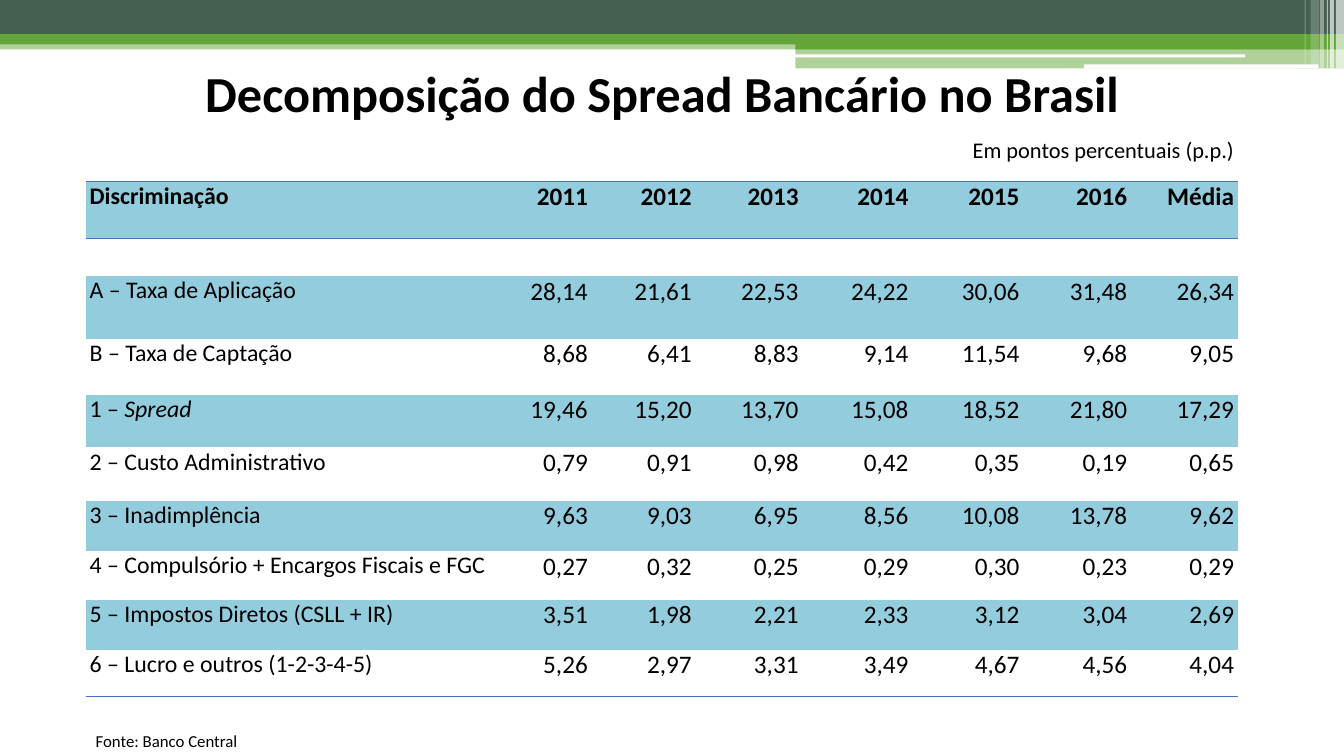
from lxml import etree
from pptx import Presentation
from pptx.dml.color import RGBColor
from pptx.enum import shapes, text
from pptx.oxml.ns import qn
from pptx.util import Inches, Pt

BLACK = RGBColor(0x00, 0x00, 0x00)
WHITE = RGBColor(0xFF, 0xFF, 0xFF)
DARK_GREEN = RGBColor(0x45, 0x5F, 0x51)
GREEN = RGBColor(0x63, 0xA5, 0x37)
BAND_BLUE = RGBColor(0x93, 0xCD, 0xDD)
RULE_BLUE = RGBColor(0x44, 0x72, 0xC4)

FONT = "Calibri"
NO_TABLE_STYLE = "{2D5ABB26-0587-4C30-8999-92F81FD0307C}"
RECTANGLE = shapes.MSO_SHAPE.RECTANGLE
ROUNDED = shapes.MSO_SHAPE.ROUNDED_RECTANGLE
LEFT, CENTER, RIGHT = text.PP_ALIGN.LEFT, text.PP_ALIGN.CENTER, text.PP_ALIGN.RIGHT

# left, top, width, height, colour, opacity in percent
BANNER_BARS = [
    (0, 0.4, 13.33, 0.09, GREEN, 50),
    (0, 0, 13.33, 0.34, DARK_GREEN, 100),
    (0, 0.34, 13.33, 0.1, GREEN, 100),
    (7.89, 0.39, 5.44, 0.1, GREEN, 100),
    (7.89, 0.48, 5.44, 0.2, GREEN, 50),
]
BANNER_GAPS = [
    (7.88, 0.54, 4.47, 0.03, WHITE, 100),
    (10.75, 0.64, 2.33, 0.04, WHITE, 100),
]
# left, width, height, opacity in percent
BANNER_STRIPES = [
    (13.25, 0.08, 0.68, 65),
    (13.19, 0.04, 0.68, 65),
    (13.16, 0.01, 0.68, 60),
    (13.09, 0.04, 0.68, 40),
    (13, 0.08, 0.64, 20),
    (12.94, 0.01, 0.64, 30),
]

COLUMN_WIDTHS = [4.16, 1.05, 1.05, 1.05, 1.08, 1.1, 0.97, 0.97]
RIGHT_MARGINS = [0, 0.23, 0.25, 0.24, 0.23, 0.23, 0.13, 0.04]
ROW_HEIGHTS = [0.27, 0.57, 0.37, 0.62, 0.56, 0.52, 0.53, 0.5, 0.48, 0.5, 0.46, 0.32]
HEADER_ROW, FIRST_DATA_ROW = 1, 3
RULES = {0: "a:lnB", 1: "a:lnT", 10: "a:lnB", 11: "a:lnT"}

UNIT_NOTE = "Em pontos percentuais (p.p.)"
HEADER = ["Discriminação", "2011", "2012", "2013", "2014", "2015", "2016", "Média"]
SPREAD_ROWS = [
    ["A – Taxa de Aplicação", "28,14", "21,61", "22,53", "24,22", "30,06", "31,48", "26,34"],
    ["B – Taxa de Captação", "8,68", "6,41", "8,83", "9,14", "11,54", "9,68", "9,05"],
    ["1 – Spread", "19,46", "15,20", "13,70", "15,08", "18,52", "21,80", "17,29"],
    ["2 – Custo Administrativo", "0,79", "0,91", "0,98", "0,42", "0,35", "0,19", "0,65"],
    ["3 – Inadimplência", "9,63", "9,03", "6,95", "8,56", "10,08", "13,78", "9,62"],
    ["4 – Compulsório + Encargos Fiscais e FGC",
     "0,27", "0,32", "0,25", "0,29", "0,30", "0,23", "0,29"],
    ["5 – Impostos Diretos (CSLL + IR)",
     "3,51", "1,98", "2,21", "2,33", "3,12", "3,04", "2,69"],
    ["6 – Lucro e outros (1-2-3-4-5)",
     "5,26", "2,97", "3,31", "3,49", "4,67", "4,56", "4,04"],
]
SPACE_BEFORE = [7.8, 6.3, 6.3, 6.3, 6.3, 6.8, 5.8, 5.8]
ITALIC_WORD = "Spread"


def set_values(target, values):
    for name, value in values.items():
        setattr(target, name, value)


def add_run(paragraph, words, size, **font_values):
    run = paragraph.add_run()
    run.text = words
    set_values(run.font, {"name": FONT, "size": Pt(size), **font_values})
    run.font.color.rgb = BLACK


def add_bar(slide, preset, left, top, width, height, color, opacity):
    bar = slide.shapes.add_shape(
        preset, Inches(left), Inches(top), Inches(width), Inches(height))
    bar.shadow.inherit = False
    bar.line.fill.background()
    bar.fill.solid()
    bar.fill.fore_color.rgb = color
    if opacity < 100:
        color_node = bar.fill._xPr.find(f".//{qn('a:srgbClr')}")
        etree.SubElement(color_node, qn("a:alpha"), val=str(opacity * 1000))


def add_banner(slide):
    for bar in BANNER_BARS:
        add_bar(slide, RECTANGLE, *bar)
    for gap in BANNER_GAPS:
        add_bar(slide, ROUNDED, *gap)
    for left, width, height, opacity in BANNER_STRIPES:
        add_bar(slide, RECTANGLE, left, 0, width, height, WHITE, opacity)


def add_text(slide, words, left, top, width, height, size, align, anchor, bold=False):
    box = slide.shapes.add_textbox(
        Inches(left), Inches(top), Inches(width), Inches(height))
    set_values(box.text_frame, {"word_wrap": True, "vertical_anchor": anchor})
    paragraph = box.text_frame.paragraphs[0]
    paragraph.alignment = align
    add_run(paragraph, words, size, bold=bold)


def add_rule(cell, edge):
    """Draw a thin blue border on one edge, given as a:lnT or a:lnB."""
    line = etree.Element(qn(edge), w=str(Pt(1)))
    fill = etree.SubElement(line, qn("a:solidFill"))
    etree.SubElement(fill, qn("a:srgbClr"), val=str(RULE_BLUE))
    cell._tc.get_or_add_tcPr().insert(0, line)


def fill_row(table, row_index, values, space_before, bold):
    for column_index, value in enumerate(values):
        cell = table.cell(row_index, column_index)
        paragraph = cell.text_frame.paragraphs[0]
        paragraph.space_before = Pt(space_before)
        if column_index:
            cell.margin_right = Inches(RIGHT_MARGINS[column_index])
            paragraph.alignment = RIGHT
            add_run(paragraph, value, 18, bold=bold)
            continue
        cell.margin_left = Inches(0.04)
        plain, italic, _ = value.partition(ITALIC_WORD)
        add_run(paragraph, plain, 17, bold=bold)
        if italic:
            add_run(paragraph, italic, 17, italic=True)


def format_cells(table):
    """Clear margins and fills, then shade alternate rows and draw the rules."""
    no_margins = dict.fromkeys(
        ["margin_left", "margin_right", "margin_top", "margin_bottom"], 0)
    for row_index, row in enumerate(table.rows):
        row.height = Inches(ROW_HEIGHTS[row_index])
        shaded = row_index % 2 == 1 and row_index < len(ROW_HEIGHTS) - 1
        for cell in row.cells:
            set_values(cell, no_margins)
            if shaded:
                cell.fill.solid()
                cell.fill.fore_color.rgb = BAND_BLUE
            else:
                cell.fill.background()
            if row_index in RULES:
                add_rule(cell, RULES[row_index])


def add_spread_table(slide):
    frame = slide.shapes.add_table(
        len(ROW_HEIGHTS), len(COLUMN_WIDTHS), Inches(0.85), Inches(1.53),
        Inches(sum(COLUMN_WIDTHS)), Inches(sum(ROW_HEIGHTS)))
    table = frame.table
    set_values(table, {"first_row": False, "horz_banding": False})
    table._tbl.tblPr.find(qn("a:tableStyleId")).text = NO_TABLE_STYLE
    for column, width in zip(table.columns, COLUMN_WIDTHS):
        column.width = Inches(width)
    format_cells(table)

    note = table.cell(0, 0)
    note.merge(table.cell(0, len(COLUMN_WIDTHS) - 1))
    note.margin_right = Inches(RIGHT_MARGINS[-1])
    paragraph = note.text_frame.paragraphs[0]
    set_values(paragraph, {"alignment": RIGHT, "line_spacing": Pt(7.7)})
    add_run(paragraph, UNIT_NOTE, 16)

    fill_row(table, HEADER_ROW, HEADER, 1.1, True)
    for offset, (values, space) in enumerate(zip(SPREAD_ROWS, SPACE_BEFORE)):
        fill_row(table, FIRST_DATA_ROW + offset, values, space, False)


def main():
    presentation = Presentation()
    set_values(presentation, {"slide_width": Inches(13.33), "slide_height": Inches(7.5)})
    slide = presentation.slides.add_slide(presentation.slide_layouts[6])
    add_banner(slide)
    add_text(slide, "Decomposição do Spread Bancário no Brasil",
             0.85, 0.33, 11.44, 1.18, 36, CENTER, text.MSO_ANCHOR.MIDDLE, bold=True)
    add_text(slide, "Fonte: Banco Central",
             0.85, 7.2, 2.58, 0.3, 12, LEFT, text.MSO_ANCHOR.TOP)
    add_spread_table(slide)
    presentation.save("out.pptx")


if __name__ == "__main__":
    main()
